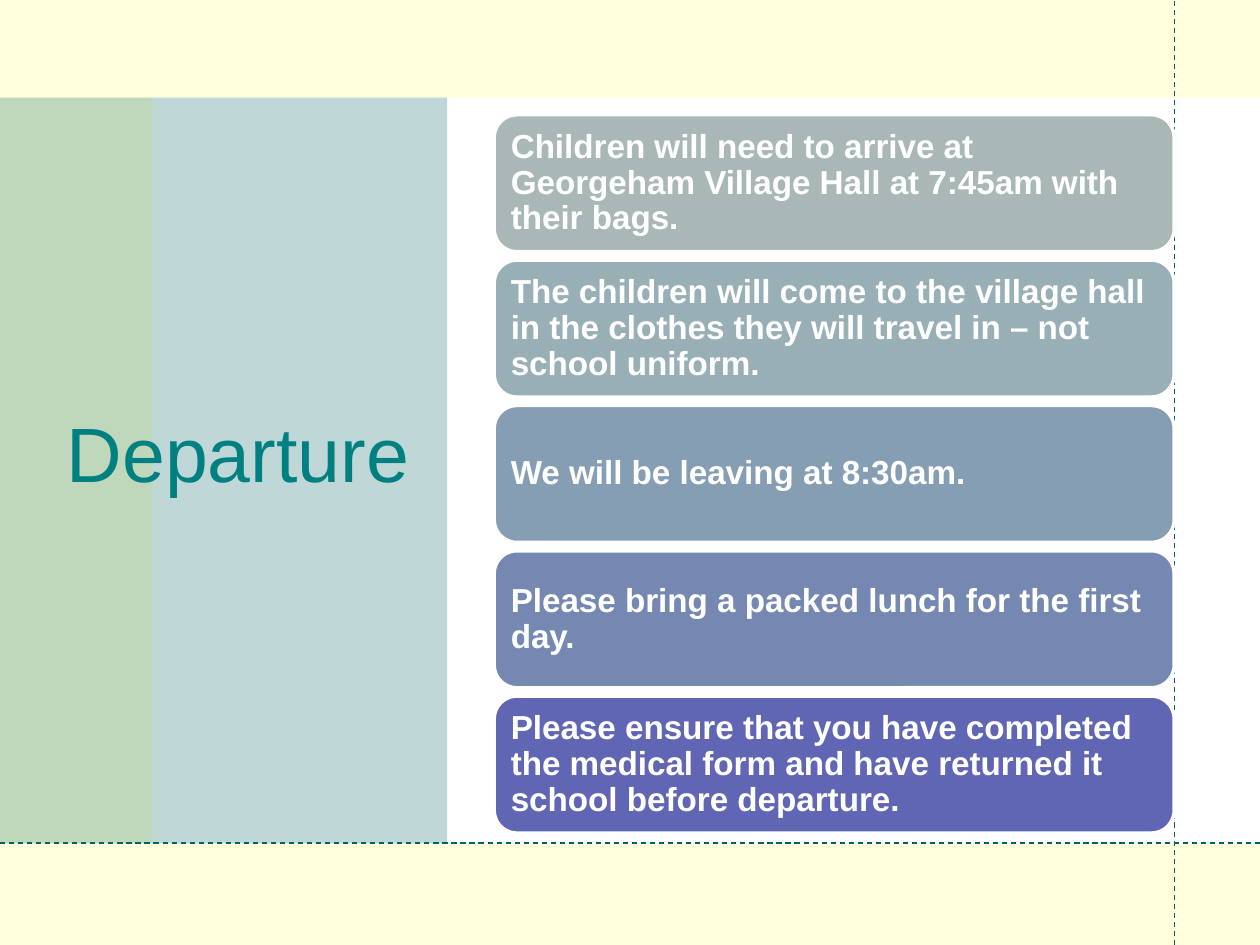
import pptx
import pptx.util
import pptx.dml.color
import pptx.enum.dml
import pptx.enum.shapes
import pptx.enum.text
import pptx.oxml
import pptx.oxml.ns

Pt = pptx.util.Pt
RGBColor = pptx.dml.color.RGBColor
MSO_SHAPE = pptx.enum.shapes.MSO_SHAPE
PP_ALIGN = pptx.enum.text.PP_ALIGN
MSO_ANCHOR = pptx.enum.text.MSO_ANCHOR

WHITE = RGBColor(0xFF, 0xFF, 0xFF)
CREAM = RGBColor(0xFF, 0xFF, 0xDB)
TEAL = RGBColor(0x00, 0x80, 0x80)
DARK_TEAL = RGBColor(0x00, 0x64, 0x62)

TITLE = "Departure"
STEPS = [
    ("Children will need to arrive at Georgeham Village Hall at 7:45am with their bags.",
     RGBColor(0xA9, 0xB8, 0xB7)),
    ("The children will come to the village hall in the clothes they will travel in – not school uniform.",
     RGBColor(0x97, 0xAF, 0xB5)),
    ("We will be leaving at 8:30am.", RGBColor(0x86, 0x9E, 0xB3)),
    ("Please bring a packed lunch for the first day.", RGBColor(0x74, 0x88, 0xB2)),
    ("Please ensure that you have completed the medical form and have returned it school before departure.",
     RGBColor(0x60, 0x66, 0xB3)),
]

SLIDE_W, SLIDE_H = 720, 540
PANEL_LEFT, PANEL_TOP, PANEL_BOTTOM = 87.2, 55.8, 482
BAND_W = 255.5
RULE_X, RULE_Y = 671.2, 481.8
STEP_LEFT, STEP_TOP, STEP_W, STEP_H, STEP_PITCH = 282.4, 65.6, 388.6, 78.3, 83.05


def add_box(slide, shape, left, top, width, height, color):
    sp = slide.shapes.add_shape(shape, Pt(left), Pt(top), Pt(width), Pt(height))
    sp.shadow.inherit = False
    sp.fill.solid()
    sp.fill.fore_color.rgb = color
    sp.line.fill.background()
    return sp


def set_alpha(sp, percent):
    clr = sp.fill._xPr.find(".//" + pptx.oxml.ns.qn("a:srgbClr"))
    clr.append(pptx.oxml.parse_xml(
        f'<a:alpha {pptx.oxml.ns.nsdecls("a")} val="{percent * 1000}"/>'))


def add_rule(slide, x1, y1, x2, y2):
    line = slide.shapes.add_connector(
        pptx.enum.shapes.MSO_CONNECTOR.STRAIGHT, Pt(x1), Pt(y1), Pt(x2), Pt(y2))
    line.line.color.rgb = DARK_TEAL
    line.line.width = Pt(0.75)
    line.line.dash_style = pptx.enum.dml.MSO_LINE.DASH
    line._element.spPr.append(
        pptx.oxml.parse_xml(f'<a:effectLst {pptx.oxml.ns.nsdecls("a")}/>'))


def add_title(slide):
    sp = slide.shapes.title
    slide.shapes._spTree.append(sp._element)
    sp.left, sp.top, sp.width, sp.height = Pt(29.5), Pt(53.3), Pt(213), Pt(409.7)
    tf = sp.text_frame
    tf.text = TITLE
    tf.word_wrap = True
    tf.vertical_anchor = MSO_ANCHOR.MIDDLE
    p = tf.paragraphs[0]
    p.alignment = PP_ALIGN.CENTER
    p.font.name = "Arial"
    p.font.size = Pt(44)
    p.font.color.rgb = TEAL


def add_step(slide, index, text, color):
    sp = add_box(slide, MSO_SHAPE.ROUNDED_RECTANGLE, STEP_LEFT,
                 STEP_TOP + index * STEP_PITCH, STEP_W, STEP_H, color)
    sp.line.color.rgb = WHITE
    sp.line.width = Pt(2)
    tf = sp.text_frame
    tf.word_wrap = True
    tf.vertical_anchor = MSO_ANCHOR.MIDDLE
    tf.margin_left = tf.margin_right = tf.margin_top = tf.margin_bottom = Pt(5.7)
    tf.text = text
    p = tf.paragraphs[0]
    p.alignment = PP_ALIGN.LEFT
    p.line_spacing = 0.9
    p.font.name = "Arial"
    p.font.size = Pt(19)
    p.font.bold = True
    p.font.color.rgb = WHITE


def main():
    prs = pptx.Presentation()
    prs.slide_width, prs.slide_height = Pt(SLIDE_W), Pt(SLIDE_H)
    slide = prs.slides.add_slide(prs.slide_layouts[5])
    slide.background.fill.solid()
    slide.background.fill.fore_color.rgb = CREAM

    panel_h = PANEL_BOTTOM - PANEL_TOP
    add_box(slide, MSO_SHAPE.RECTANGLE, PANEL_LEFT, PANEL_TOP,
            SLIDE_W - PANEL_LEFT, panel_h, WHITE)
    band = add_box(slide, MSO_SHAPE.RECTANGLE, 0, PANEL_TOP, BAND_W, panel_h, DARK_TEAL)
    set_alpha(band, 25)
    add_title(slide)
    add_rule(slide, RULE_X, SLIDE_H, RULE_X, 0)
    add_rule(slide, 0, RULE_Y, SLIDE_W, RULE_Y)
    for i, (text, color) in enumerate(STEPS):
        add_step(slide, i, text, color)
    prs.save("out.pptx")


if __name__ == "__main__":
    main()
